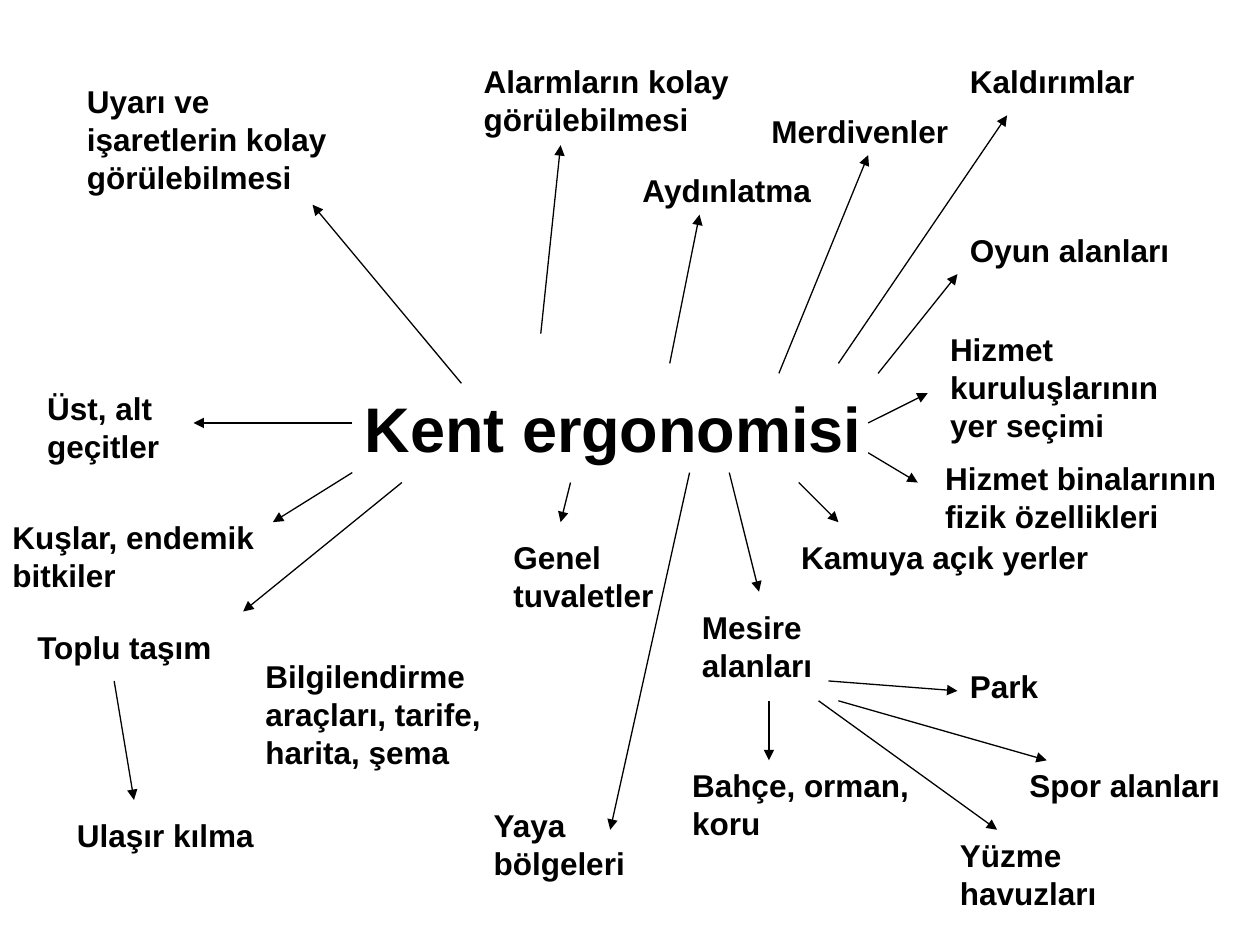
from typing import NamedTuple

from lxml import etree
from pptx import Presentation
from pptx.dml.color import RGBColor
from pptx.enum.shapes import MSO_CONNECTOR
from pptx.enum.text import MSO_AUTO_SIZE
from pptx.oxml.ns import qn
from pptx.util import Inches, Pt

BLACK = RGBColor(0, 0, 0)
FONT = "Arial"
STRAIGHT = MSO_CONNECTOR.STRAIGHT
GROW = MSO_AUTO_SIZE.SHAPE_TO_FIT_TEXT

STEP = 10 / 127
LEFT_EDGE = 0.04
TOP_EDGE = 0.05


class Topic(NamedTuple):
    text: str
    col: float
    row: float
    cols: float
    lines: int = 1
    size: int = 18


class Arrow(NamedTuple):
    start_col: float
    start_row: float
    end_col: float
    end_row: float


TOPICS = [
    Topic("Kent ergonomisi", 35, 38, 54, 2, 36),
    Topic("Uyarı ve işaretlerin kolay görülebilmesi", 7, 7, 30, 3),
    Topic("Alarmların kolay görülebilmesi", 47, 5, 28, 2),
    Topic("Aydınlatma", 63, 16, 24),
    Topic("Merdivenler", 76, 10, 27),
    Topic("Kaldırımlar", 96, 5, 21.3),
    Topic("Oyun alanları", 96, 22, 25),
    Topic("Hizmet kuruluşlarının yer seçimi", 94, 32, 25, 3),
    Topic("Hizmet binalarının fizik özellikleri", 93.5, 45, 33, 2),
    Topic("Kamuya açık yerler", 79, 53, 39),
    Topic("Mesire alanları", 69, 60, 21, 2),
    Topic("Park", 96, 66, 18),
    Topic("Spor alanları", 102, 76, 24.5),
    Topic("Yüzme havuzları", 95, 83, 22, 2),
    Topic("Bahçe, orman, koru", 68, 76, 26, 2),
    Topic("Yaya bölgeleri", 48, 80, 19, 2),
    Topic("Genel tuvaletler", 50, 53, 19, 2),
    Topic("Bilgilendirme araçları, tarife, harita, şema", 25, 65, 34, 3),
    Topic("Toplu taşım", 2, 62, 21),
    Topic("Ulaşır kılma", 6, 81, 27),
    Topic("Kuşlar, endemik bitkiler", -0.5, 51, 32.5, 2),
    Topic("Üst, alt geçitler", 3, 38, 24, 2),
]

CENTRE_ARROWS = [
    Arrow(46, 38, 31, 20),
    Arrow(54, 33, 56, 14),
    Arrow(67, 36, 70, 21),
    Arrow(78, 37, 87, 15),
    Arrow(84, 36, 101, 11),
    Arrow(88, 37, 96, 27),
    Arrow(87, 42, 93, 39),
    Arrow(87, 45, 92, 48),
    Arrow(80, 48, 84, 52),
    Arrow(73, 47, 76, 59),
    Arrow(69, 47, 61, 83),
    Arrow(57, 48, 56, 52),
    Arrow(40, 48, 24, 61),
    Arrow(35, 47, 27, 52),
    Arrow(35, 42, 19, 42),
]

BRANCH_ARROWS = [
    Arrow(83, 68, 96, 69),
    Arrow(84, 70, 105, 76),
    Arrow(82, 70, 100, 83),
    Arrow(77, 70, 77, 76),
    Arrow(11, 68, 13, 80),
]


def column_x(col: float) -> int:
    return Inches(LEFT_EDGE + col * STEP)


def row_y(row: float) -> int:
    return Inches(TOP_EDGE + row * STEP)


def add_topic(slide, topic: Topic) -> None:
    box = slide.shapes.add_textbox(
        column_x(topic.col),
        row_y(topic.row),
        Inches(topic.cols * STEP),
        Inches(0.1 + 0.3 * topic.lines),
    )
    frame = box.text_frame
    frame.word_wrap = True
    frame.auto_size = GROW
    frame.text = topic.text
    font = frame.paragraphs[0].runs[0].font
    font.name = FONT
    font.size = Pt(topic.size)
    font.bold = True
    font.color.rgb = BLACK


def add_arrow(slide, arrow: Arrow) -> None:
    connector = slide.shapes.add_connector(
        STRAIGHT,
        column_x(arrow.start_col),
        row_y(arrow.start_row),
        column_x(arrow.end_col),
        row_y(arrow.end_row),
    )
    connector.line.color.rgb = BLACK
    connector.line.width = Pt(0.75)
    etree.SubElement(connector.line._get_or_add_ln(), qn("a:tailEnd"), type="triangle")
    etree.SubElement(connector._element.spPr, qn("a:effectLst"))


def main() -> None:
    presentation = Presentation()
    presentation.slide_width = Inches(10)
    presentation.slide_height = Inches(7.5)
    slide = presentation.slides.add_slide(presentation.slide_layouts[6])
    for topic in TOPICS:
        add_topic(slide, topic)
    for arrow in CENTRE_ARROWS + BRANCH_ARROWS:
        add_arrow(slide, arrow)
    presentation.save("out.pptx")


if __name__ == "__main__":
    main()
